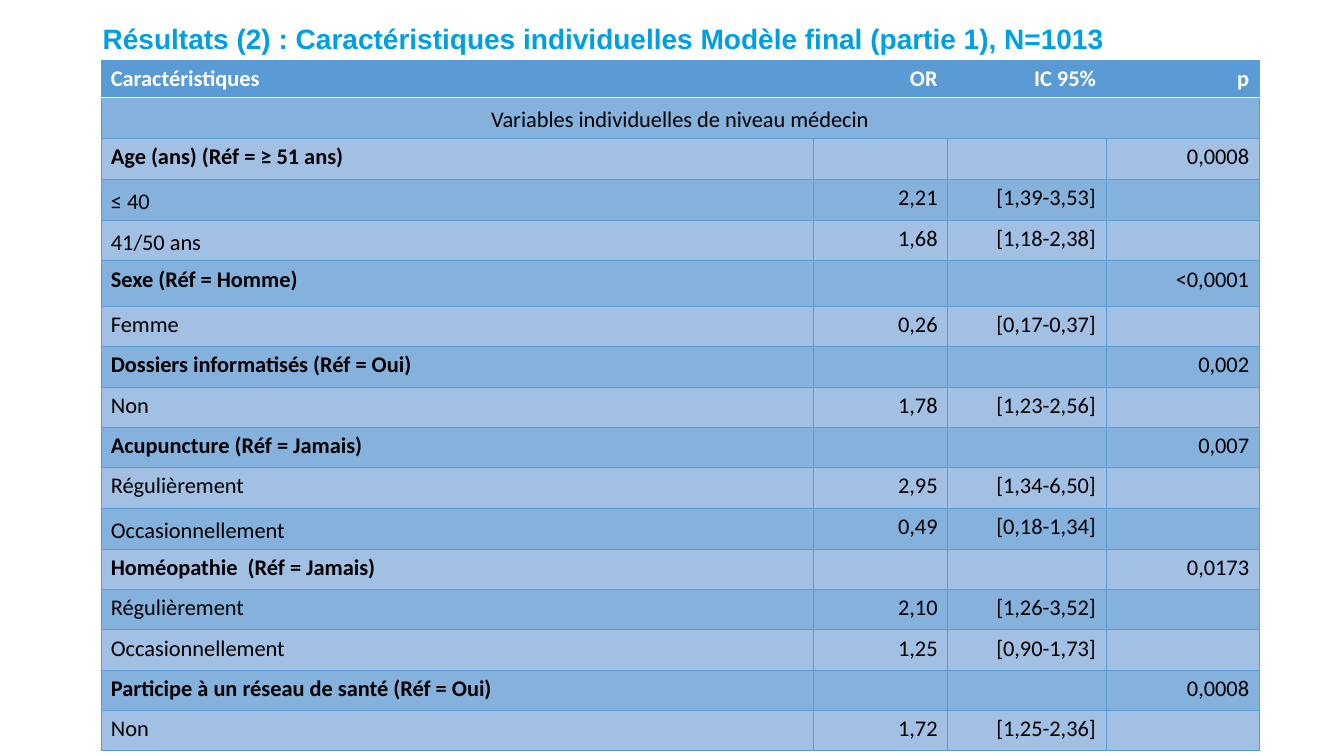
from lxml import etree
from pptx import Presentation
from pptx.dml.color import RGBColor
from pptx.enum import text as t
from pptx.oxml import ns
from pptx.util import Inches, Pt

COLORS = {
    "title": "009FE3",
    "header": "5B9BD5",
    "border": "5B9BD5",
    "dark_band": "85B1DD",
    "light_band": "A2BFE4",
    "white": "FFFFFF",
    "black": "000000",
}
LEFT, CENTER, RIGHT = t.PP_ALIGN.LEFT, t.PP_ALIGN.CENTER, t.PP_ALIGN.RIGHT

COLUMN_WIDTHS = [7.07, 1.33, 1.57, 1.52]
ROW_HEIGHT, TALL_ROW_HEIGHT, TALL_ROW = 0.36, 0.45, 5
LOOSE_ROWS = {1, 3, 4, 11}  # first cell set at 1.15 line spacing

HEADER = ("Caractéristiques", "OR", "IC 95%", "p")
SECTION = "Variables individuelles de niveau médecin"
# Each variable: name, p value, then its categories with OR and interval
VARIABLES = [
    ("Age (ans) (Réf = ≥ 51 ans)", "0,0008",
     [("≤ 40", "2,21", "[1,39-3,53]"), ("41/50 ans", "1,68", "[1,18-2,38]")]),
    ("Sexe (Réf = Homme)", "<0,0001", [("Femme", "0,26", "[0,17-0,37]")]),
    ("Dossiers informatisés (Réf = Oui)", "0,002", [("Non", "1,78", "[1,23-2,56]")]),
    ("Acupuncture (Réf = Jamais)", "0,007",
     [("Régulièrement", "2,95", "[1,34-6,50]"),
      ("Occasionnellement", "0,49", "[0,18-1,34]")]),
    ("Homéopathie  (Réf = Jamais)", "0,0173",
     [("Régulièrement", "2,10", "[1,26-3,52]"),
      ("Occasionnellement", "1,25", "[0,90-1,73]")]),
    ("Participe à un réseau de santé (Réf = Oui)", "0,0008",
     [("Non", "1,72", "[1,25-2,36]")]),
]


def rgb(name):
    return RGBColor.from_string(COLORS[name])


def write_text(frame, text, font="Calibri", size=16, color="black", bold=False,
               align=LEFT, spacing=None):
    paragraph = frame.paragraphs[0]
    paragraph.alignment = align
    if spacing:
        paragraph.line_spacing = spacing
    run = paragraph.add_run()
    run.text = text
    run.font.name = font
    run.font.size = Pt(size)
    run.font.bold = bold
    run.font.color.rgb = rgb(color)


def set_border(cell, side, color, width):
    line = etree.SubElement(cell._tc.get_or_add_tcPr(), ns.qn(f"a:ln{side}"),
                            w=str(Pt(width)))
    fill = etree.SubElement(line, ns.qn("a:solidFill"))
    etree.SubElement(fill, ns.qn("a:srgbClr"), val=COLORS[color])


def format_cell(cell, row):
    # White rule between the header and the body, thin blue lines elsewhere
    white_side = {0: "B", 1: "T"}.get(row)
    for side in "LRTB":
        if side == white_side:
            set_border(cell, side, "white", 1)
        else:
            set_border(cell, side, "border", 0.5)
    band = "header" if row == 0 else "dark_band" if row % 2 else "light_band"
    cell.fill.solid()
    cell.fill.fore_color.rgb = rgb(band)


def table_rows():
    rows = [HEADER, (SECTION, "", "", "")]
    for name, p_value, categories in VARIABLES:
        rows.append((name, "", "", p_value))
        rows += [(*category, "") for category in categories]
    return rows


def add_title(slide, left, top, width, height):
    box = slide.shapes.add_textbox(Inches(left), Inches(top), Inches(width), Inches(height))
    frame = box.text_frame
    frame.word_wrap = True
    frame.vertical_anchor = t.MSO_ANCHOR.MIDDLE
    write_text(frame, "Résultats (2) : Caractéristiques individuelles "
               "Modèle final (partie 1), N=1013",
               font="Arial", size=20, color="title", bold=True, spacing=0.9)


def add_results_table(slide, left, top, width, height):
    rows = table_rows()
    variable_names = {variable[0] for variable in VARIABLES}
    graphic = slide.shapes.add_table(len(rows), len(COLUMN_WIDTHS), Inches(left),
                                     Inches(top), Inches(width), Inches(height))
    table = graphic.table
    table.horz_banding = False
    for column, column_width in zip(table.columns, COLUMN_WIDTHS):
        column.width = Inches(column_width)

    for row, values in enumerate(rows):
        table.rows[row].height = Inches(TALL_ROW_HEIGHT if row == TALL_ROW else ROW_HEIGHT)
        for column, value in enumerate(values):
            cell = table.cell(row, column)
            format_cell(cell, row)
            if value:
                write_text(cell.text_frame, value,
                           color="white" if row == 0 else "black",
                           bold=row == 0 or value in variable_names,
                           align=CENTER if value == SECTION else RIGHT if column else LEFT,
                           spacing=1.15 if row in LOOSE_ROWS and column == 0 else None)

    # Section row spans the full width
    table.cell(1, 0).merge(table.cell(1, len(COLUMN_WIDTHS) - 1))
    graphic.height = Inches(height)


def main():
    presentation = Presentation()
    presentation.slide_width = Inches(13.33)
    presentation.slide_height = Inches(7.5)
    slide = presentation.slides.add_slide(presentation.slide_layouts[6])
    add_title(slide, 0.92, 0, 11.5, 0.8)
    add_results_table(slide, 1, 0.6, 11.5, 6.84)
    presentation.save("out.pptx")


if __name__ == "__main__":
    main()
